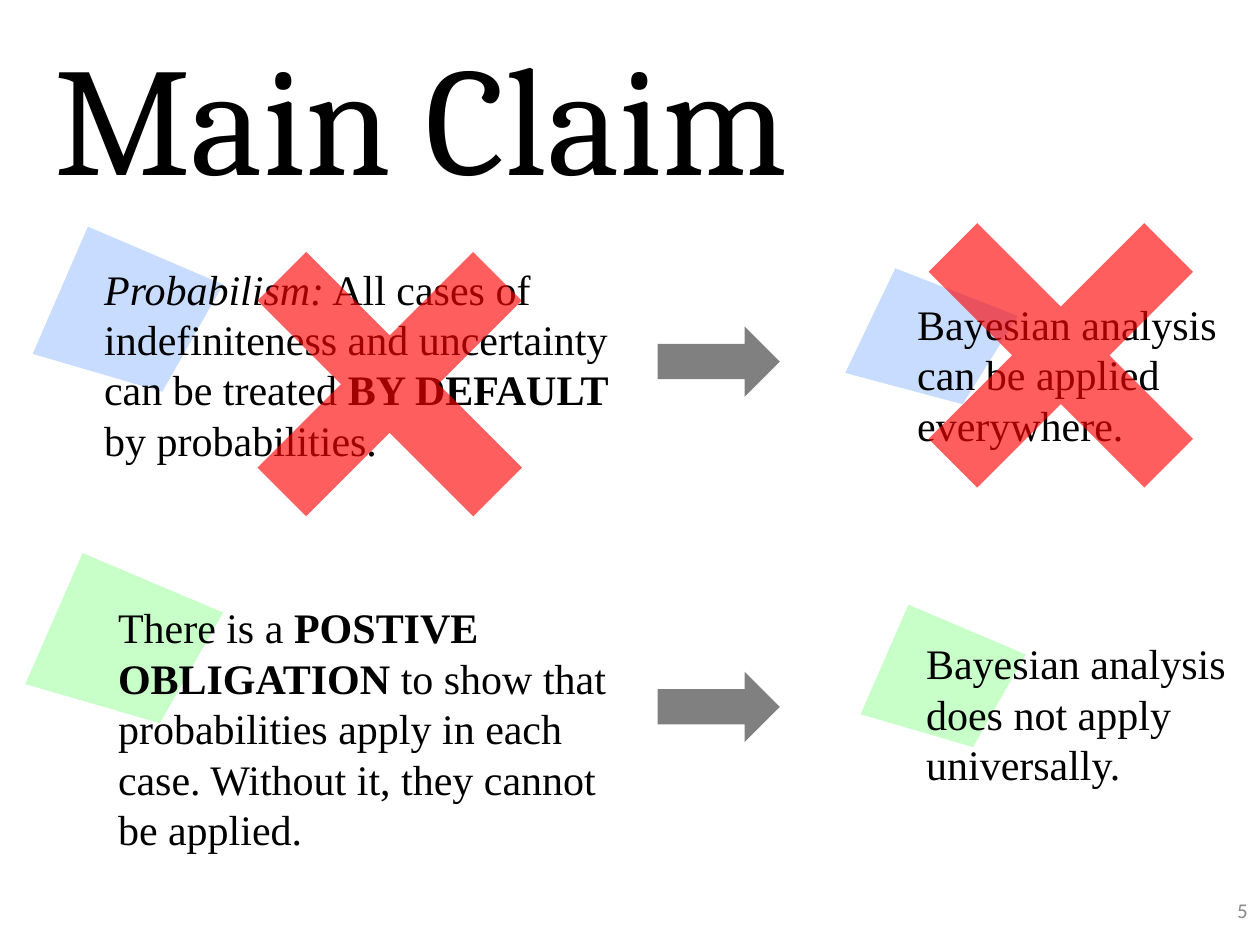
from dataclasses import dataclass
from typing import NamedTuple

from lxml import etree
from pptx import Presentation
from pptx.dml.color import RGBColor
from pptx.enum import shapes, text
from pptx.oxml import ns
from pptx import util as u


@dataclass(frozen=True)
class Theme:
    ink: str = "000000"
    number: str = "898989"
    arrow: str = "808080"
    rejected: str = "C8DCFF"
    accepted: str = "C8FFC8"
    cross: str = "FF0000"
    title_font: str = "Cambria"
    body_font: str = "Times New Roman"
    number_font: str = "Calibri"
    title_size: float = 88
    body_size: float = 24
    number_size: float = 12
    body_leading: float = 28.8


class Box(NamedTuple):
    """Left, top, width and height in centimetres."""
    left: float
    top: float
    width: float
    height: float

    def lengths(self) -> list[u.Length]:
        return [u.Cm(value) for value in self]


class Run(NamedTuple):
    words: str
    bold: bool = False
    italic: bool = False


@dataclass(frozen=True)
class Statement:
    patch: Box
    patch_color: str
    area: Box
    runs: tuple[Run, ...]


THEME = Theme()
PATCH_OUTLINE = ((0.29, 0), (1, 0.35), (0.68, 1), (0, 0.77))
PATCH_UNITS = 100
TITLE_AREA = Box(0.84, 1.55, 22.2, 1.5)
NUMBER_AREA = Box(24.69, 17.96, 0.71, 0.76)
ARROW_TOPS = (6.58, 13.54)
CROSS_SIZE = 6.15
CROSS_CORNERS = ((4.78, 4.67), (18.31, 4.09))

STATEMENTS = (
    Statement(Box(0.66, 4.57, 3.84, 3.33), THEME.rejected, Box(1.85, 5.18, 10.85, 4.37), (
        Run("Probabilism:", italic=True),
        Run(" All cases of indefiniteness and uncertainty can be treated "),
        Run("BY DEFAULT", bold=True),
        Run(" by probabilities."))),
    Statement(Box(0.51, 11.15, 3.99, 3.43), THEME.accepted, Box(2.13, 12.01, 11.13, 5.38), (
        Run("There is a "),
        Run("POSTIVE OBLIGATION", bold=True),
        Run(" to show that probabilities apply in each case. "
            "Without it, they cannot be applied."))),
    Statement(Box(17.04, 5.41, 3.48, 2.74), THEME.rejected, Box(18.24, 5.89, 6.6, 3.33), (
        Run("Bayesian analysis can be applied everywhere."),)),
    Statement(Box(17.35, 12.19, 3.33, 2.87), THEME.accepted, Box(18.42, 12.73, 6.73, 3.33), (
        Run("Bayesian analysis does not apply universally."),)),
)


def write(shape, runs: tuple[Run, ...], *, font: str, size: float, color: str = THEME.ink,
          align=text.PP_ALIGN.LEFT, anchor=text.MSO_ANCHOR.TOP,
          leading: float | None = None) -> None:
    frame = shape.text_frame
    frame.word_wrap = True
    frame.auto_size = text.MSO_AUTO_SIZE.NONE
    frame.vertical_anchor = anchor
    paragraph = frame.paragraphs[0]
    paragraph.alignment = align
    if leading:
        paragraph.line_spacing = u.Pt(leading)
    for item in runs:
        run = paragraph.add_run()
        run.text = item.words
        run.font.name = font
        run.font.size = u.Pt(size)
        run.font.bold = item.bold
        run.font.italic = item.italic
        run.font.color.rgb = RGBColor.from_string(color)


def paint(shape, color: str, opacity: int = 100) -> None:
    """Give a flat fill without outline; opacity is in percent."""
    shape.shadow.inherit = False
    shape.line.fill.background()
    shape.fill.solid()
    shape.fill.fore_color.rgb = RGBColor.from_string(color)
    if opacity < 100:
        color_element = shape.fill._xPr.find(".//" + ns.qn("a:srgbClr"))
        etree.SubElement(color_element, ns.qn("a:alpha"), val=str(opacity * 1000))


def add_patch(slide, box: Box, color: str) -> None:
    left, top, width, height = box.lengths()
    points = [(x * PATCH_UNITS, y * PATCH_UNITS) for x, y in PATCH_OUTLINE]
    builder = slide.shapes.build_freeform(
        *points[0], scale=(width / PATCH_UNITS, height / PATCH_UNITS))
    builder.add_line_segments(points[1:], close=True)
    paint(builder.convert_to_shape(left, top), color)


def add_statement(slide, statement: Statement) -> None:
    add_patch(slide, statement.patch, statement.patch_color)
    write(slide.shapes.add_textbox(*statement.area.lengths()), statement.runs,
          font=THEME.body_font, size=THEME.body_size, leading=THEME.body_leading)


def add_arrow(slide, top: float) -> None:
    arrow = slide.shapes.add_shape(
        shapes.MSO_SHAPE.RIGHT_ARROW, *Box(13.26, top, 2.46, 1.42).lengths())
    paint(arrow, THEME.arrow)


def add_cross(slide, left: float, top: float) -> None:
    cross = slide.shapes.add_shape(
        shapes.MSO_SHAPE.CROSS, *Box(left, top, CROSS_SIZE, CROSS_SIZE).lengths())
    cross.adjustments[0] = 0.387
    cross.rotation = 45
    paint(cross, THEME.cross, opacity=63)


def main() -> None:
    presentation = Presentation()
    presentation.slide_width, presentation.slide_height = u.Cm(25.4), u.Cm(19.05)
    slide = presentation.slides.add_slide(presentation.slide_layouts[5])

    title = slide.shapes.title
    title.left, title.top, title.width, title.height = TITLE_AREA.lengths()
    write(title, (Run("Main Claim"),), font=THEME.title_font, size=THEME.title_size,
          anchor=text.MSO_ANCHOR.MIDDLE)
    write(slide.shapes.add_textbox(*NUMBER_AREA.lengths()), (Run("5"),),
          font=THEME.number_font, size=THEME.number_size, color=THEME.number,
          align=text.PP_ALIGN.RIGHT, anchor=text.MSO_ANCHOR.MIDDLE)

    for statement in STATEMENTS:
        add_statement(slide, statement)
    for top in ARROW_TOPS:
        add_arrow(slide, top)
    for corner in CROSS_CORNERS:
        add_cross(slide, *corner)

    presentation.save("out.pptx")


if __name__ == "__main__":
    main()
